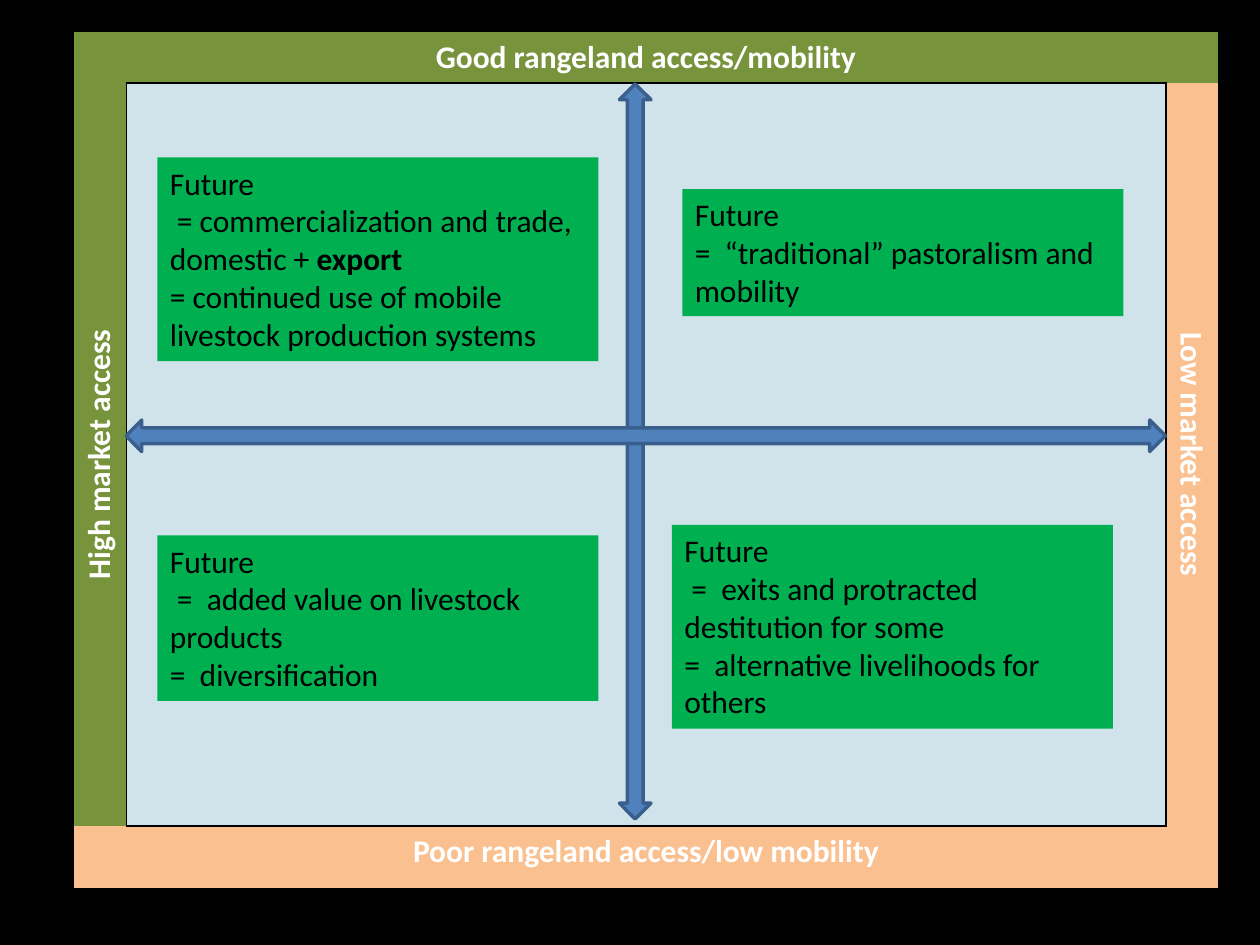
from dataclasses import dataclass

from lxml import etree
from pptx import Presentation
from pptx.dml.color import RGBColor
from pptx.enum.shapes import MSO_SHAPE
from pptx.enum.text import MSO_AUTO_SIZE, PP_ALIGN
from pptx.oxml.ns import qn
from pptx.util import Pt

CENTER = PP_ALIGN.CENTER
GROW = MSO_AUTO_SIZE.SHAPE_TO_FIT_TEXT
UP_DOWN = MSO_SHAPE.UP_DOWN_ARROW
LEFT_RIGHT = MSO_SHAPE.LEFT_RIGHT_ARROW
NO_GRID_STYLE = "{2D5ABB26-0587-4C30-8999-92F81FD0307C}"


@dataclass(frozen=True)
class Theme:
    font: str = "Calibri"
    size: float = 18
    back: str = "000000"
    text: str = "000000"
    label: str = "FFFFFF"
    border: str = "000000"
    good: str = "77933C"
    poor: str = "FAC090"
    field: str = "D0E3EA"
    future: str = "00B050"
    arrow: str = "4F81BD"
    arrow_line: str = "3A5F8C"


class SlideBuilder:
    def __init__(self, slide, theme):
        self.s, self.theme = slide, theme

    def paint(self, fill, color):
        fill.solid()
        fill.fore_color.rgb = RGBColor.from_string(color)

    def background(self):
        self.paint(self.s.background.fill, self.theme.back)

    def run(self, p, text, color, bold=False):
        r = p.add_run()
        r.text = text
        style = {"name": self.theme.font, "size": Pt(self.theme.size), "bold": bold}
        for name, value in style.items():
            setattr(r.font, name, value)
        r.font.color.rgb = RGBColor.from_string(color)

    def table(self, left, top, cols, rows):
        tbl = self.s.shapes.add_table(len(rows), len(cols), Pt(left), Pt(top),
                                      Pt(sum(cols)), Pt(sum(rows))).table
        tbl.first_row = tbl.horz_banding = False
        tbl._tbl.tblPr.find(qn("a:tableStyleId")).text = NO_GRID_STYLE
        for col, width in zip(tbl.columns, cols):
            col.width = Pt(width)
        for row, height in zip(tbl.rows, rows):
            row.height = Pt(height)
        return tbl

    def cell(self, cell, fill, text="", vert=None, sides=""):
        """Fill a cell; sides names its bordered edges, in the order LRTB."""
        self.paint(cell.fill, fill)
        if text:
            p = cell.text_frame.paragraphs[0]
            p.alignment = CENTER
            self.run(p, text, self.theme.label, bold=True)
        tc_pr = cell._tc.get_or_add_tcPr()
        if vert:
            tc_pr.set("vert", vert)
        for i, side in enumerate(sides):
            ln = etree.Element(qn(f"a:ln{side}"), w=str(Pt(1)))
            solid = etree.SubElement(ln, qn("a:solidFill"))
            etree.SubElement(solid, qn("a:srgbClr"), val=self.theme.border)
            tc_pr.insert(i, ln)

    def arrow(self, kind, left, top, width, height):
        sp = self.s.shapes.add_shape(kind, Pt(left), Pt(top), Pt(width), Pt(height))
        sp.shadow.inherit = False
        self.paint(sp.fill, self.theme.arrow)
        self.paint(sp.line.fill, self.theme.arrow_line)
        sp.line.width = Pt(2)

    def future_box(self, left, top, height, points):
        """Add a box headed Future; each point is a list of (text, bold)."""
        sp = self.s.shapes.add_textbox(Pt(left), Pt(top), Pt(252), Pt(height))
        self.paint(sp.fill, self.theme.future)
        tf = sp.text_frame
        for name, value in {"word_wrap": True, "auto_size": GROW}.items():
            setattr(tf, name, value)
        self.run(tf.paragraphs[0], "Future", self.theme.text)
        for point in points:
            p = tf.add_paragraph()
            for text, bold in point:
                self.run(p, text, self.theme.text, bold)


FUTURES = [
    (90, 90, 116.4, [
        [(" = commercialization and trade, domestic + ", False), ("export", True)],
        [("= continued use of mobile livestock production systems", False)]]),
    (390, 108, 72.7, [
        [("=  “traditional” pastoralism and mobility", False)]]),
    (90, 306, 94.5, [
        [(" =  added value on livestock products", False)],
        [("=  diversification", False)]]),
    (384, 300, 116.4, [
        [(" =  exits and protracted destitution for some", False)],
        [("=  alternative livelihoods for others", False)]]),
]


def main():
    prs = Presentation()
    prs.slide_width, prs.slide_height = Pt(720), Pt(540)
    theme = Theme()
    b = SlideBuilder(prs.slides.add_slide(prs.slide_layouts[6]), theme)
    b.background()

    tbl = b.table(42.2, 18.2, [30, 594, 30], [29.2, 424.6, 35.6])
    for row in (0, 2):
        tbl.cell(row, 0).merge(tbl.cell(row, 2))
    b.cell(tbl.cell(0, 0), theme.good, "Good rangeland access/mobility")
    b.cell(tbl.cell(1, 0), theme.good, "High market access", "vert270", "R")
    b.cell(tbl.cell(1, 1), theme.field, sides="LRTB")
    b.cell(tbl.cell(1, 2), theme.poor, "Low market access", "vert", "L")
    b.cell(tbl.cell(2, 0), theme.poor, "Poor rangeland access/low mobility")

    b.arrow(UP_DOWN, 354, 48, 18, 420)
    b.arrow(LEFT_RIGHT, 72, 240, 594, 18)
    for future in FUTURES:
        b.future_box(*future)
    prs.save("out.pptx")


if __name__ == "__main__":
    main()
